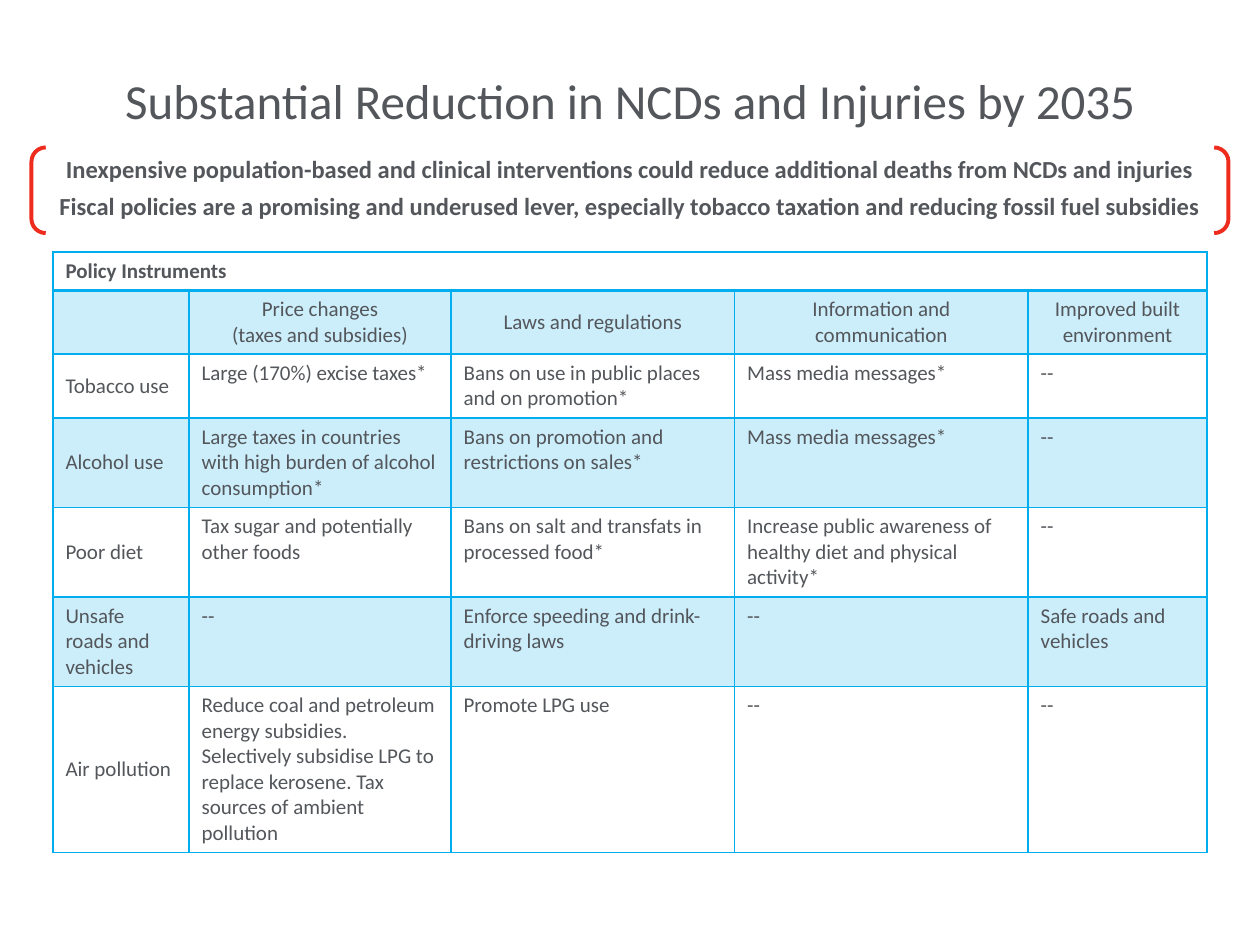
from lxml import etree
from pptx import Presentation, util as u
from pptx.dml.color import RGBColor
from pptx.enum import shapes, text
from pptx.oxml.ns import qn

GREY = RGBColor(0x53, 0x56, 0x5A)
BLUE = RGBColor(0x00, 0xAE, 0xEF)
RED = RGBColor(0xEE, 0x2C, 0x1E)
FONT = "Calibri"
PLAIN_TABLE_STYLE = "{2D5ABB26-0587-4C30-8999-92F81FD0307C}"

TITLE = "Substantial Reduction in NCDs and Injuries by 2035"
MESSAGES = [
    "Inexpensive population-based and clinical interventions could reduce additional deaths from NCDs and injuries",
    "Fiscal policies are a promising and underused lever, especially tobacco taxation and reducing fossil fuel subsidies",
]
TABLE_TITLE = "Policy Instruments"
HEADINGS = ["", "Price changes\n(taxes and subsidies)", "Laws and regulations",
            "Information and communication", "Improved built environment"]
POLICIES = [
    ["Tobacco use", "Large (170%) excise taxes*",
     "Bans on use in public places and on promotion*", "Mass media messages*", "--"],
    ["Alcohol use", "Large taxes in countries with high burden of alcohol consumption*",
     "Bans on promotion and restrictions on sales*", "Mass media messages*", "--"],
    ["Poor diet", "Tax sugar and potentially other foods",
     "Bans on salt and transfats in processed food*",
     "Increase public awareness of healthy diet and physical activity*", "--"],
    ["Unsafe roads and vehicles", "--", "Enforce speeding and drink-driving laws",
     "--", "Safe roads and vehicles"],
    ["Air pollution",
     "Reduce coal and petroleum energy subsidies. Selectively subsidise LPG to replace "
     "kerosene. Tax sources of ambient pollution", "Promote LPG use", "--", "--"],
]
COLUMN_WIDTHS = [1.08, 2.08, 2.25, 2.33, 1.42]
ROW_HEIGHTS = [0.29, 0.49, 0.49, 0.68, 0.68, 0.68, 1.27]


def write(frame, content, size=12, bold=False, align=text.PP_ALIGN.LEFT,
          line_spacing=None, gap=None):
    """Fill a text frame, one paragraph per line, with gap points between them."""
    frame.word_wrap = True
    lines = content.split("\n")
    for index, line in enumerate(lines):
        paragraph = frame.paragraphs[0] if index == 0 else frame.add_paragraph()
        paragraph.alignment = align
        if line_spacing:
            paragraph.line_spacing = line_spacing
        if gap and index < len(lines) - 1:
            paragraph.space_after = u.Pt(gap)
        run = paragraph.add_run()
        run.text = line
        run.font.name = FONT
        run.font.size = u.Pt(size)
        run.font.bold = bold
        run.font.color.rgb = GREY


def style_cell(cell, shaded, top=1, bottom=1):
    """Draw the four borders (widths in points), then the light tint or no fill."""
    properties = cell._tc.get_or_add_tcPr()
    for side, width in (("L", 1), ("R", 1), ("T", top), ("B", bottom)):
        line = etree.SubElement(properties, qn(f"a:ln{side}"), w=str(u.Pt(width)))
        fill = etree.SubElement(line, qn("a:solidFill"))
        etree.SubElement(fill, qn("a:srgbClr"), val=str(BLUE))
    if shaded:
        cell.fill.solid()
        cell.fill.fore_color.rgb = BLUE
        color = properties.find(qn("a:solidFill")).find(qn("a:srgbClr"))
        etree.SubElement(color, qn("a:alpha"), val="20000")
    else:
        cell.fill.background()


def add_title(slide):
    title = slide.shapes.title
    title.left, title.top = u.Inches(0.5), u.Inches(0.17)
    title.width, title.height = u.Inches(9), u.Inches(1.25)
    title.text_frame.vertical_anchor = text.MSO_ANCHOR.MIDDLE
    write(title.text_frame, TITLE, size=28, align=text.PP_ALIGN.CENTER)


def add_policy_table(slide):
    rows = [[TABLE_TITLE] + [""] * (len(HEADINGS) - 1), HEADINGS] + POLICIES
    frame = slide.shapes.add_table(
        len(rows), len(HEADINGS), u.Inches(0.42), u.Inches(2),
        u.Inches(sum(COLUMN_WIDTHS)), u.Inches(sum(ROW_HEIGHTS)))
    table = frame.table
    table.first_row = table.horz_banding = False
    table._tbl.tblPr.find(qn("a:tableStyleId")).text = PLAIN_TABLE_STYLE
    for column, width in zip(table.columns, COLUMN_WIDTHS):
        column.width = u.Inches(width)
    for row, height in zip(table.rows, ROW_HEIGHTS):
        row.height = u.Inches(height)
    table.cell(0, 0).merge(table.cell(0, len(HEADINGS) - 1))

    for r, row in enumerate(rows):
        for c, content in enumerate(row):
            cell = table.cell(r, c)
            style_cell(cell, shaded=r % 2 == 1,
                       top=2 if r == 1 else 1, bottom=2 if r == 0 else 1)
            if r == 1 or (r > 1 and c == 0):
                cell.vertical_anchor = text.MSO_ANCHOR.MIDDLE
            if content:
                write(cell.text_frame, content, bold=r == 0,
                      align=text.PP_ALIGN.CENTER if r == 1 else text.PP_ALIGN.LEFT)


def add_key_messages(slide):
    bracket = slide.shapes.add_shape(
        shapes.MSO_SHAPE.DOUBLE_BRACKET,
        u.Inches(0.25), u.Inches(1.17), u.Inches(9.5), u.Inches(0.68))
    bracket.shadow.inherit = False
    bracket.fill.background()
    bracket.line.color.rgb = RED
    bracket.line.width = u.Pt(2.25)
    bracket.text_frame.vertical_anchor = text.MSO_ANCHOR.TOP
    write(bracket.text_frame, "\n".join(MESSAGES), size=14, bold=True,
          align=text.PP_ALIGN.CENTER, line_spacing=0.9, gap=6)


def main():
    presentation = Presentation()
    presentation.slide_width, presentation.slide_height = u.Inches(10), u.Inches(7.5)
    slide = presentation.slides.add_slide(presentation.slide_layouts[5])
    add_title(slide)
    add_policy_table(slide)
    add_key_messages(slide)
    presentation.save("out.pptx")


if __name__ == "__main__":
    main()
